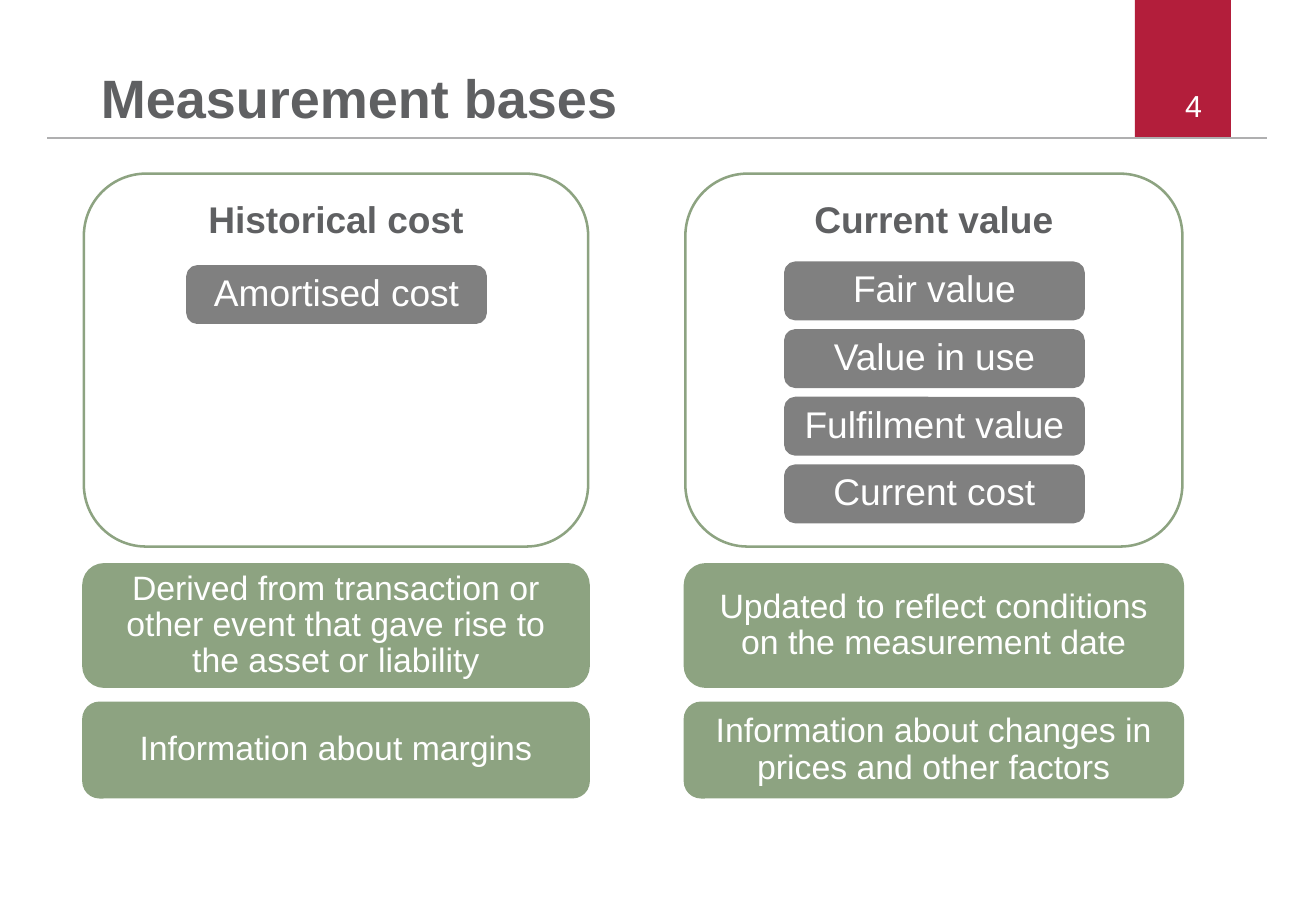
"""Builds the slide comparing historical cost with current value."""
from pptx import Presentation
from pptx.dml.color import RGBColor
from pptx.enum.shapes import MSO_CONNECTOR, MSO_SHAPE
from pptx.enum.text import MSO_ANCHOR, PP_ALIGN
from pptx.oxml.ns import qn
from pptx.util import Inches, Pt

HUES = {"red": "B31E3B", "rule": "AFAFB0", "text": "5F6062",
        "green": "8DA381", "gray": "808080", "white": "FFFFFF"}

deck = Presentation()
deck.slide_width, deck.slide_height = Inches(10.83), Inches(7.5)
slide = deck.slides.add_slide(deck.slide_layouts[6])


def hue(name):
    return RGBColor.from_string(HUES[name])


def put(text, area, kind=None, fill=None, line=None, width=1.5, size=20,
        color="white", bold=False, align=PP_ALIGN.CENTER,
        anchor=MSO_ANCHOR.MIDDLE, inset=0.08, lead=0.9):
    box = [Inches(v) for v in area]
    if kind is None:
        shape = slide.shapes.add_textbox(*box)
    else:
        shape = slide.shapes.add_shape(kind, *box)
        shape.shadow.inherit = False
        if fill:
            shape.fill.solid()
            shape.fill.fore_color.rgb = hue(fill)
        else:
            shape.fill.background()
        if line:
            shape.line.color.rgb = hue(line)
            shape.line.width = Pt(width)
        else:
            shape.line.fill.background()
    if not text:
        return
    frame = shape.text_frame
    frame.word_wrap = True
    frame.vertical_anchor = anchor
    frame.margin_left = frame.margin_right = Inches(inset)
    frame.margin_top = frame.margin_bottom = Inches(inset)
    para = frame.paragraphs[0]
    para.text = text
    para.alignment = align
    para.line_spacing = lead
    para.font.name = "Arial"
    para.font.size = Pt(size)
    para.font.bold = bold
    para.font.color.rgb = hue(color)


put("", (9.34, 0, 0.79, 1.14), kind=MSO_SHAPE.RECTANGLE, fill="red")
rule = slide.shapes.add_connector(
    MSO_CONNECTOR.STRAIGHT, Inches(0.39), Inches(1.14), Inches(10.43), Inches(1.14))
rule.line.color.rgb = hue("rule")
rule.line.width = Pt(1.2)
props = rule._element.spPr
props.append(props.makeelement(qn("a:effectLst"), {}))

put("4", (7.46, 0.67, 2.53, 0.4), size=18, align=PP_ALIGN.RIGHT, inset=0.1, lead=1)
put("Measurement bases", (0.83, 0, 8.02, 1.07), size=32, color="text", bold=True,
    align=PP_ALIGN.LEFT, anchor=MSO_ANCHOR.BOTTOM, inset=0)

bases = [
    ("Historical cost", 0.69, 4.15, 1.55, 2.2, ["Amortised cost"],
     ["Derived from transaction or other event that gave rise to the asset or liability",
      "Information about margins"]),
    ("Current value", 5.64, 4.09, 6.47, 2.17,
     ["Fair value", "Value in use", "Fulfilment value", "Current cost"],
     ["Updated to reflect conditions on the measurement date",
      "Information about changes in prices and other factors"]),
]
rows = [(4.65, 1), (5.79, 0.77)]
ROUND = MSO_SHAPE.ROUNDED_RECTANGLE

for head, left, wide, inner, top, kinds, notes in bases:
    put(head, (left, 1.43, wide, 3.07), kind=ROUND, line="green", size=22,
        color="text", bold=True, anchor=MSO_ANCHOR.TOP)
    for step, name in enumerate(kinds):
        put(name, (inner, top + step * 0.557, 2.44, 0.45), kind=ROUND,
            fill="gray", line="gray", width=2.5, size=22)
    for note, (y, high) in zip(notes, rows):
        put(note, (left, y, wide, high), kind=ROUND, fill="green", line="green", width=2)

deck.save("out.pptx")
